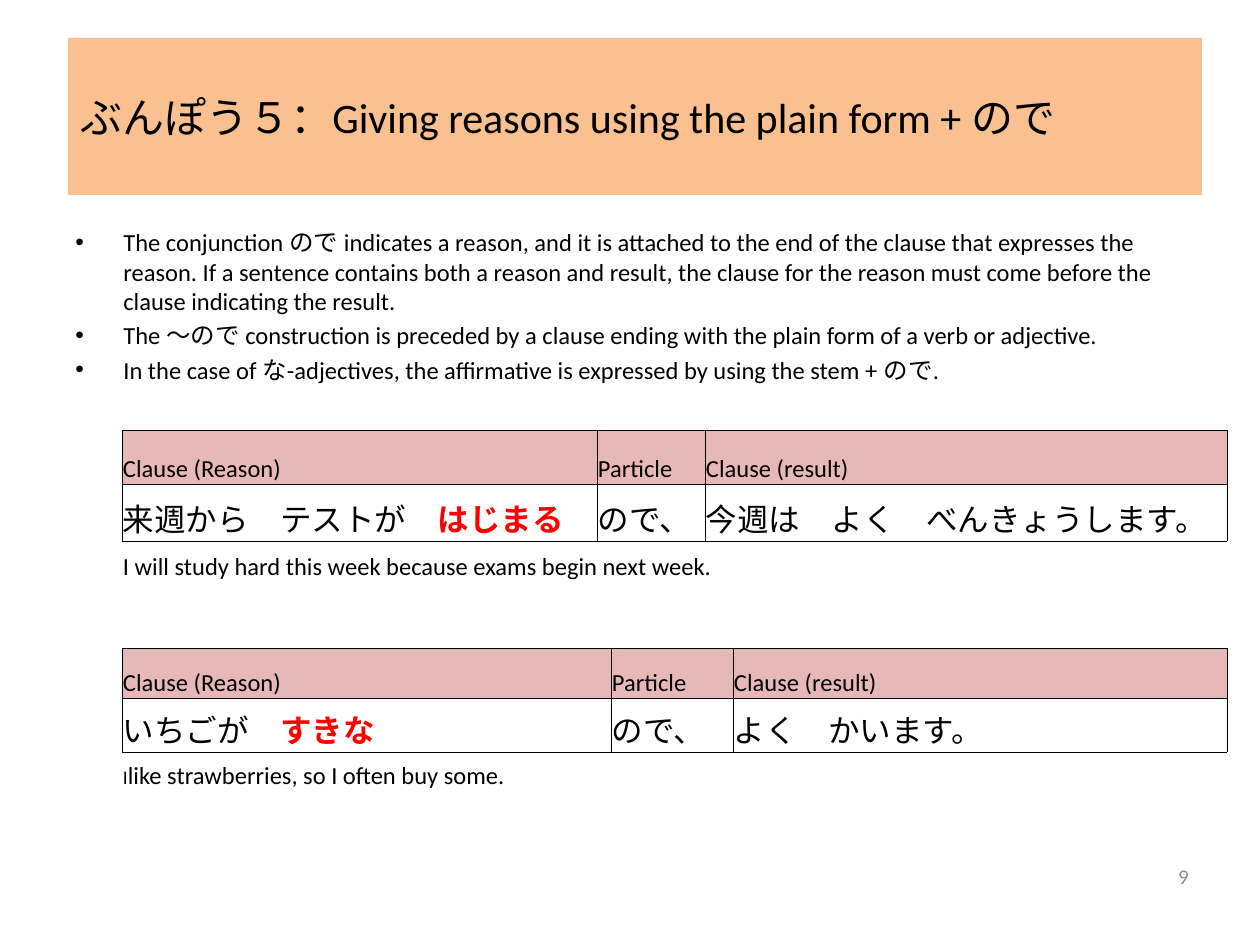
from lxml import etree
from pptx import Presentation, util as u
from pptx.dml.color import RGBColor
from pptx.enum import shapes, text
from pptx.oxml import ns

PX = u.Inches(1) // 126
FONT = "Calibri"
BLACK, RED, GREY = "000000", "FF0000", "8C8C8C"
ORANGE, PINK = "FAC090", "E6B9B8"
HEADINGS = [[(heading, 14)] for heading in ("Clause (Reason)", "Particle", "Clause (result)")]


def px(*lengths):
    return [length * PX for length in lengths]


def color(hex_code):
    return RGBColor.from_string(hex_code)


def add_run(paragraph, words, size, hex_code=BLACK, bold=False):
    run = paragraph.add_run()
    run.text = words
    run.font.name, run.font.size, run.font.bold = FONT, u.Pt(size), bold
    run.font.color.rgb = color(hex_code)


def add_sub(parent, tag, **attributes):
    return etree.SubElement(parent, ns.qn(tag), attributes)


def add_title(slide, box, words):
    banner = slide.shapes.add_shape(shapes.MSO_SHAPE.RECTANGLE, *px(*box))
    banner.shadow.inherit = False
    banner.fill.solid()
    banner.fill.fore_color.rgb = color(ORANGE)
    banner.line.fill.background()
    frame = banner.text_frame
    frame.word_wrap = True
    frame.vertical_anchor = text.MSO_ANCHOR.MIDDLE
    frame.paragraphs[0].alignment = text.PP_ALIGN.LEFT
    add_run(frame.paragraphs[0], words, 24)


def add_text_frame(slide, box):
    frame = slide.shapes.add_textbox(*px(*box)).text_frame
    frame.word_wrap = True
    return frame


def add_bullets(slide, box, points):
    frame = add_text_frame(slide, box)
    for number, point in enumerate(points):
        paragraph = frame.add_paragraph() if number else frame.paragraphs[0]
        paragraph.space_before = u.Pt(2.8)
        properties = paragraph._p.get_or_add_pPr()
        indent = 48 * PX
        properties.set("marL", str(indent))
        properties.set("indent", str(-indent))
        add_sub(properties, "a:buFont", typeface="Arial")
        add_sub(properties, "a:buChar", char="•")
        add_run(paragraph, point, 14)


def add_page_number(slide, box, number):
    frame = add_text_frame(slide, box)
    frame.vertical_anchor = text.MSO_ANCHOR.MIDDLE
    frame.paragraphs[0].alignment = text.PP_ALIGN.RIGHT
    add_run(frame.paragraphs[0], number, 12, GREY)


def set_borders(cell, drawn_sides):
    properties = cell._tc.get_or_add_tcPr()
    for side in "LRTB":
        line = add_sub(properties, f"a:ln{side}", w=str(u.Pt(0.5)))
        if side in drawn_sides:
            add_sub(add_sub(line, "a:solidFill"), "a:srgbClr", val=BLACK)
        else:
            add_sub(line, "a:noFill")


def fill_cell(cell, runs, drawn_sides, fill=None):
    set_borders(cell, drawn_sides)
    if fill:
        cell.fill.solid()
        cell.fill.fore_color.rgb = color(fill)
    else:
        cell.fill.background()
    cell.margin_left = cell.margin_right = cell.margin_top = PX
    cell.margin_bottom = 0
    cell.vertical_anchor = text.MSO_ANCHOR.BOTTOM
    paragraph = cell.text_frame.paragraphs[0]
    for run in runs:
        add_run(paragraph, *run)
    if not runs:
        add_sub(paragraph._p, "a:endParaRPr", sz="1100")


def add_example(slide, top, widths, heights, sentence, translation, merged=False):
    """Headings, the Japanese sentence by clause, and its translation below."""
    frame = slide.shapes.add_table(3, 3, *px(122, top, sum(widths), sum(heights)))
    table = frame.table
    table.first_row = table.horz_banding = False
    for column, width in zip(table.columns, widths):
        column.width = width * PX
    for row, height in zip(table.rows, heights):
        row.height = height * PX
    rows = [(HEADINGS, "LRTB", PINK),
            (sentence, "LRTB", None),
            ([translation, [], []], "T", None)]
    for row, (contents, sides, fill) in enumerate(rows):
        for column, runs in enumerate(contents):
            fill_cell(table.cell(row, column), runs, sides, fill)
    if merged:
        table.cell(2, 0).merge(table.cell(2, 2))


def main():
    deck = Presentation()
    deck.slide_width, deck.slide_height = px(1260, 945)
    slide = deck.slides.add_slide(deck.slide_layouts[6])

    # Page number, title and grammar points
    add_page_number(slide, (907, 851, 294, 50), "9")
    add_title(slide, (68, 38, 1134, 157), "ぶんぽう５：Giving reasons using the plain form + ので")
    add_bullets(slide, (63, 221, 1134, 624), [
        "The conjunction ので indicates a reason, and it is attached to the end of the "
        "clause that expresses the reason. If a sentence contains both a reason and "
        "result, the clause for the reason must come before the clause indicating the result.",
        "The ～ので construction is preceded by a clause ending with the plain form of a "
        "verb or adjective.",
        "In the case of な-adjectives, the affirmative is expressed by using the stem + ので.",
    ])

    # Example with a verb
    add_example(
        slide, 430, (475, 108, 522), (54, 57, 41),
        [[("来週から　テストが　", 18), ("はじまる", 18, RED, True)],
         [("ので、", 18)],
         [("今週は　よく　べんきょうします。", 18)]],
        [("I will study hard this week because exams begin next week.", 14)],
        merged=True)

    # Example with a な-adjective
    add_example(
        slide, 648, (489, 122, 494), (50, 54, 39),
        [[("いちごが　", 18), ("すきな", 18, RED, True)],
         [("ので、", 18)],
         [("よく　かいます。", 18)]],
        [("I", 11), ("like strawberries, so I often buy some.", 14)])

    deck.save("out.pptx")


if __name__ == "__main__":
    main()
